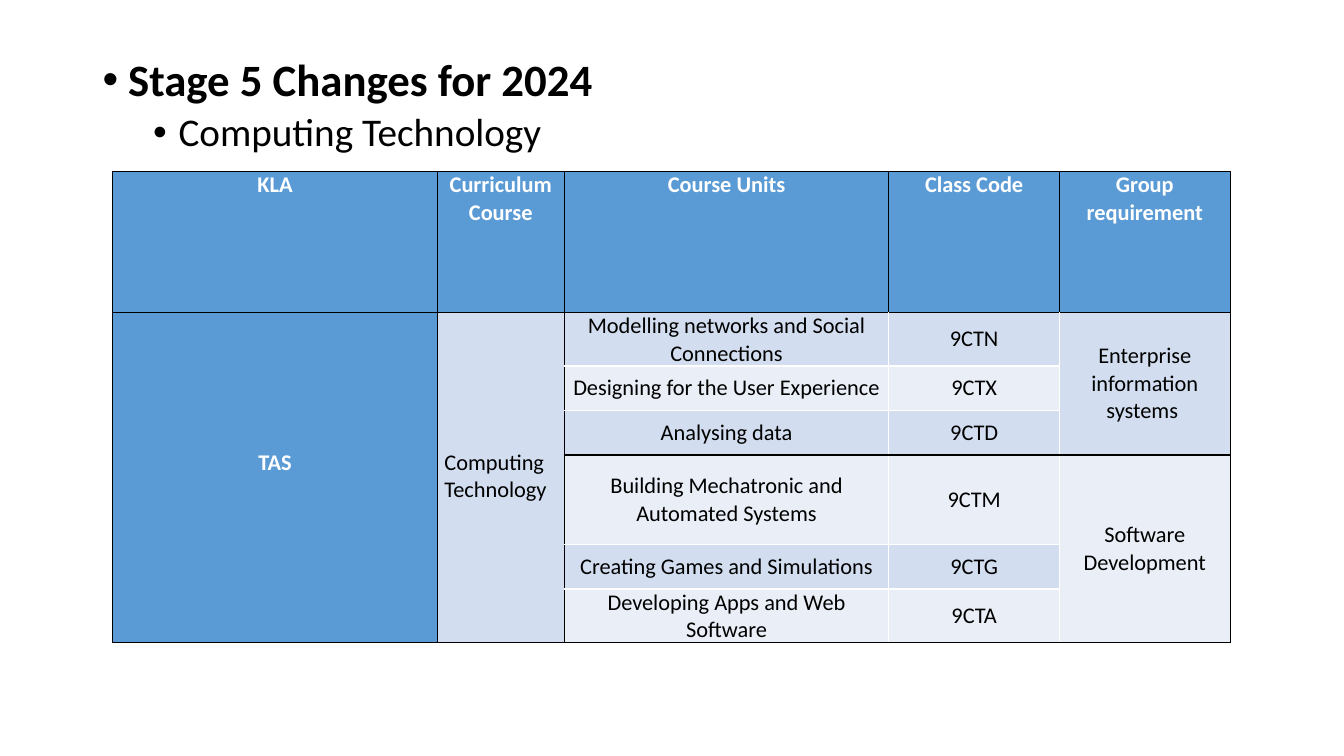
"""Build a slide that lists the Stage 5 course changes for 2024."""
import pptx
import pptx.dml.color
import pptx.enum.text
import pptx.oxml
import pptx.oxml.ns
import pptx.util

Cm, Pt = pptx.util.Cm, pptx.util.Pt
RGB = pptx.dml.color.RGBColor
ALIGN = pptx.enum.text.PP_ALIGN
ANCHOR = pptx.enum.text.MSO_ANCHOR

BLACK = RGB(0x00, 0x00, 0x00)
WHITE = RGB(0xFF, 0xFF, 0xFF)
BLUE = RGB(0x5B, 0x9B, 0xD5)
MID = RGB(0xD2, 0xDE, 0xEF)
PALE = RGB(0xEA, 0xEF, 0xF7)

WIDTHS = [8.18, 3.2, 8.18, 4.3, 4.3]
HEIGHTS = [3.55, 1.12, 1.12, 1.12, 2.26, 1.12, 1.12]
ROWS = [
    ["KLA", "Curriculum Course", "Course Units", "Class Code", "Group requirement"],
    ["TAS", "Computing Technology", "Modelling networks and Social Connections",
     "9CTN", "Enterprise information systems "],
    ["", "", "Designing for the User Experience", "9CTX", ""],
    ["", "", "Analysing data", "9CTD", ""],
    ["", "", "Building Mechatronic and Automated Systems", "9CTM", "Software Development"],
    ["", "", "Creating Games and Simulations", "9CTG", ""],
    ["", "", "Developing Apps and Web Software", "9CTA", ""],
]
MERGES = [(1, 0, 6), (1, 1, 6), (1, 4, 3), (4, 4, 3)]


class Page:
    """Hold the style and the current slide."""

    font = "Calibri"

    def __init__(self, deck):
        self.slide = deck.slides.add_slide(deck.slide_layouts[6])

    def style(self, para, size, color, bold):
        para.font.name = self.font
        para.font.size = Pt(size)
        para.font.color.rgb = color
        para.font.bold = bold

    def xml(self, tag, body, **attrs):
        pairs = " ".join(f'{key}="{val}"' for key, val in attrs.items())
        space = pptx.oxml.ns.nsdecls("a")
        return pptx.oxml.parse_xml(f"<a:{tag} {space} {pairs}>{body}</a:{tag}>")

    def bullets(self, left, top, width, height, items):
        box = self.slide.shapes.add_textbox(Cm(left), Cm(top), Cm(width), Cm(height))
        frame = box.text_frame
        frame.word_wrap = True
        for level, (text, size, bold, gap) in enumerate(items):
            para = frame.add_paragraph() if level else frame.paragraphs[0]
            para.text = text
            para.level = level
            para.line_spacing = 0.9
            para.space_before = Pt(gap)
            self.style(para, size, BLACK, bold)
            props = para._p.get_or_add_pPr()
            props.set("marL", str(Cm(0.64 + 1.27 * level)))
            props.set("indent", str(-Cm(0.64)))
            props.append(self.xml("buFont", "", typeface="Arial"))
            props.append(self.xml("buChar", "", char="•"))

    def borders(self, cell, colors):
        props = cell._tc.get_or_add_tcPr()
        for side, color in zip("LRTB", colors):
            fill = f'<a:solidFill><a:srgbClr val="{color}"/></a:solidFill>'
            props.append(self.xml("ln" + side, fill, w=Pt(1)))

    def cell(self, cell, text, fill, color, bold, align, anchor, top):
        cell.margin_left = cell.margin_right = Cm(0.18)
        cell.margin_top, cell.margin_bottom = Cm(top), 0
        cell.vertical_anchor = anchor
        cell.fill.solid()
        cell.fill.fore_color.rgb = fill
        para = cell.text_frame.paragraphs[0]
        para.text = text
        para.alignment = align
        self.style(para, 16, color, bold)

    def table(self, left, top):
        frame = self.slide.shapes.add_table(
            len(ROWS), len(WIDTHS), Cm(left), Cm(top), Cm(sum(WIDTHS)), Cm(sum(HEIGHTS)))
        table = frame.table
        table.first_row = table.horz_banding = False
        for col, width in zip(table.columns, WIDTHS):
            col.width = Cm(width)
        for row, height in zip(table.rows, HEIGHTS):
            row.height = Cm(height)
        for row, col, span in MERGES:
            table.cell(row, col).merge(table.cell(row + span - 1, col))
        for row, texts in enumerate(ROWS):
            for col, text in enumerate(texts):
                cell = table.cell(row, col)
                last = row + cell.span_height - 1
                grid = row > 0 and col > 1
                marks = [grid and col > 2, grid and col < 4,
                         grid and row not in (1, 4), grid and last not in (3, 6)]
                self.borders(cell, [WHITE if mark else BLACK for mark in marks])
                head = row == 0 or col == 0
                side = row > 0 and col < 2
                fill = BLUE if head else MID if row % 2 or col == 1 else PALE
                self.cell(cell, text, fill, WHITE if head else BLACK, head,
                          ALIGN.LEFT if side and col else ALIGN.CENTER,
                          ANCHOR.MIDDLE if grid else ANCHOR.TOP,
                          3.45 if side and text else 0)


def main():
    deck = pptx.Presentation()
    deck.slide_width, deck.slide_height = Cm(33.87), Cm(19.05)
    page = Page(deck)
    page.bullets(2.34, 1.32, 29.21, 3, [
        ("Stage 5 Changes for 2024", 32, True, 10),
        ("Computing Technology", 28, False, 5)])
    page.table(2.84, 4.32)
    deck.save("out.pptx")


if __name__ == "__main__":
    main()
